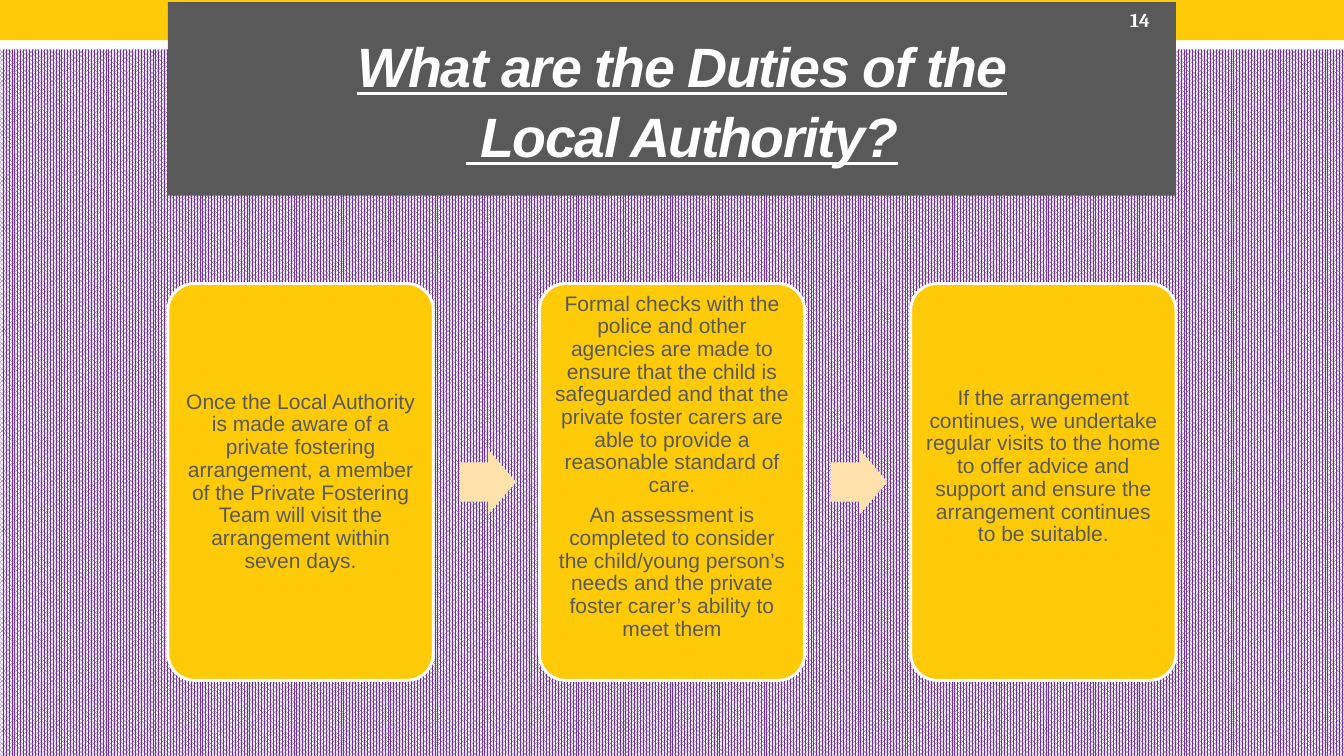
from dataclasses import dataclass

from pptx import Presentation
from pptx import util as u
from pptx.dml.color import RGBColor
from pptx.enum import dml, shapes, text

SLIDE_W, SLIDE_H = 13.33, 7.5
LEFT = SLIDE_W / 8               # the content spans the middle six eighths
COL = SLIDE_W * 0.75 / 38        # three cards of 10 columns, two gaps of 4
ROW = SLIDE_H / 30
FULL = SLIDE_W / COL             # slide width in columns
EDGE = -LEFT / COL               # left slide edge in columns

YELLOW, PEACH, GREY, WHITE, PURPLE = "FFCA08", "FFE1AB", "595959", "FFFFFF", "7030A0"
CARD_W, GAP, CARD_TOP, CARD_H = 10, 4, 11.25, 15.75
ARROW_W, ARROW_H = 2.12, 2.6
RECT = shapes.MSO_SHAPE.RECTANGLE


@dataclass
class Cell:
    """A place on the grid, in columns and rows."""
    col: float
    row: float
    cols: float
    rows: float

    def box(self) -> list:
        return [u.Inches(n) for n in (LEFT + self.col * COL, self.row * ROW,
                                      self.cols * COL, self.rows * ROW)]


@dataclass
class Card:
    paragraphs: list
    bottom: float = 0.06         # bottom inset in inches


CARDS = [
    Card(["Once the Local Authority is made aware of a private fostering arrangement, "
          "a member of the Private Fostering Team will visit the arrangement within seven days."]),
    Card(["Formal checks with the police and other agencies are made to ensure that the child "
          "is safeguarded and that the private foster carers are able to provide a reasonable "
          "standard of care.",
          "An assessment is completed to consider the child/young person’s needs and the "
          "private foster carer’s ability to meet them"], bottom=0.36),
    Card(["If the arrangement continues, we undertake regular visits to the home to offer "
          "advice and support and ensure the arrangement continues to be suitable."], bottom=0.36),
]


def rgb(hex_color: str) -> RGBColor:
    return RGBColor.from_string(hex_color)


def add_shape(slide, kind, cell: Cell, fill: str, line: str = "", adj: tuple = ()):
    sp = slide.shapes.add_shape(kind, *cell.box())
    sp.shadow.inherit = False
    sp.fill.solid()
    sp.fill.fore_color.rgb = rgb(fill)
    if line:
        sp.line.color.rgb = rgb(line)
        sp.line.width = u.Pt(2.08)
    else:
        sp.line.fill.background()
    for i, value in enumerate(adj):
        sp.adjustments[i] = value
    return sp


def write(sp, paragraphs: list, *, size: float, color: str, font: str = "Arial",
          bold: bool = False, italic: bool = False, underline: bool = False,
          align=text.PP_ALIGN.CENTER, spacing: float = 1.0, after: float = 0,
          tracking: int = 0, insets: tuple = (0.1, 0.05, 0.1, 0.05)) -> None:
    tf = sp.text_frame
    tf.word_wrap = True
    tf.vertical_anchor = text.MSO_ANCHOR.MIDDLE
    tf.margin_left, tf.margin_top, tf.margin_right, tf.margin_bottom = map(u.Inches, insets)
    for i, words in enumerate(paragraphs):
        p = tf.paragraphs[0] if i == 0 else tf.add_paragraph()
        p.text = words
        p.alignment, p.line_spacing, p.space_after = align, spacing, u.Pt(after)
        for r in p.runs:
            f = r.font
            f.name, f.size, f.color.rgb = font, u.Pt(size), rgb(color)
            f.bold, f.italic, f.underline = bold, italic, underline
            if tracking:
                f._element.set("spc", str(tracking))


def main() -> None:
    prs = Presentation()
    prs.slide_width, prs.slide_height = u.Inches(SLIDE_W), u.Inches(SLIDE_H)
    s = prs.slides.add_slide(prs.slide_layouts[6])

    # Patterned background
    bg = s.background.fill
    bg.patterned()
    bg.pattern = dml.MSO_PATTERN.PERCENT_80
    bg.fore_color.rgb, bg.back_color.rgb = rgb(PURPLE), rgb(WHITE)

    # Bands across the top
    add_shape(s, RECT, Cell(EDGE, 0.96, FULL, 1), WHITE)
    add_shape(s, RECT, Cell(EDGE, 0, FULL, 1.6), YELLOW)

    # Title and slide number
    title = add_shape(s, RECT, Cell(0, 0.08, 38, 7.68), GREY)
    write(title, ["What are the Duties of the\v Local Authority?"], size=39.6, color=WHITE,
          bold=True, italic=True, underline=True, spacing=1.05, tracking=-100,
          insets=(0.3, 0.05, 0.1, 0.05))
    number = s.shapes.add_textbox(*Cell(35.9, 0.08, 5.93, 1.44).box())
    write(number, ["14"], size=14, color=WHITE, font="Cambria", bold=True,
          align=text.PP_ALIGN.LEFT)

    # Cards with an arrow in each gap
    for i, card in enumerate(CARDS):
        col = i * (CARD_W + GAP)
        sp = add_shape(s, shapes.MSO_SHAPE.ROUNDED_RECTANGLE,
                       Cell(col, CARD_TOP, CARD_W, CARD_H), YELLOW, WHITE, (0.1,))
        write(sp, card.paragraphs, size=15, color=GREY, spacing=0.9, after=5.25,
              insets=(0.06, 0.06, 0.06, card.bottom))
        if i < len(CARDS) - 1:
            add_shape(s, shapes.MSO_SHAPE.RIGHT_ARROW,
                      Cell(col + CARD_W + 1, CARD_TOP + (CARD_H - ARROW_H) / 2,
                           ARROW_W, ARROW_H), PEACH, adj=(0.6, 0.5))

    prs.save("out.pptx")


if __name__ == "__main__":
    main()
